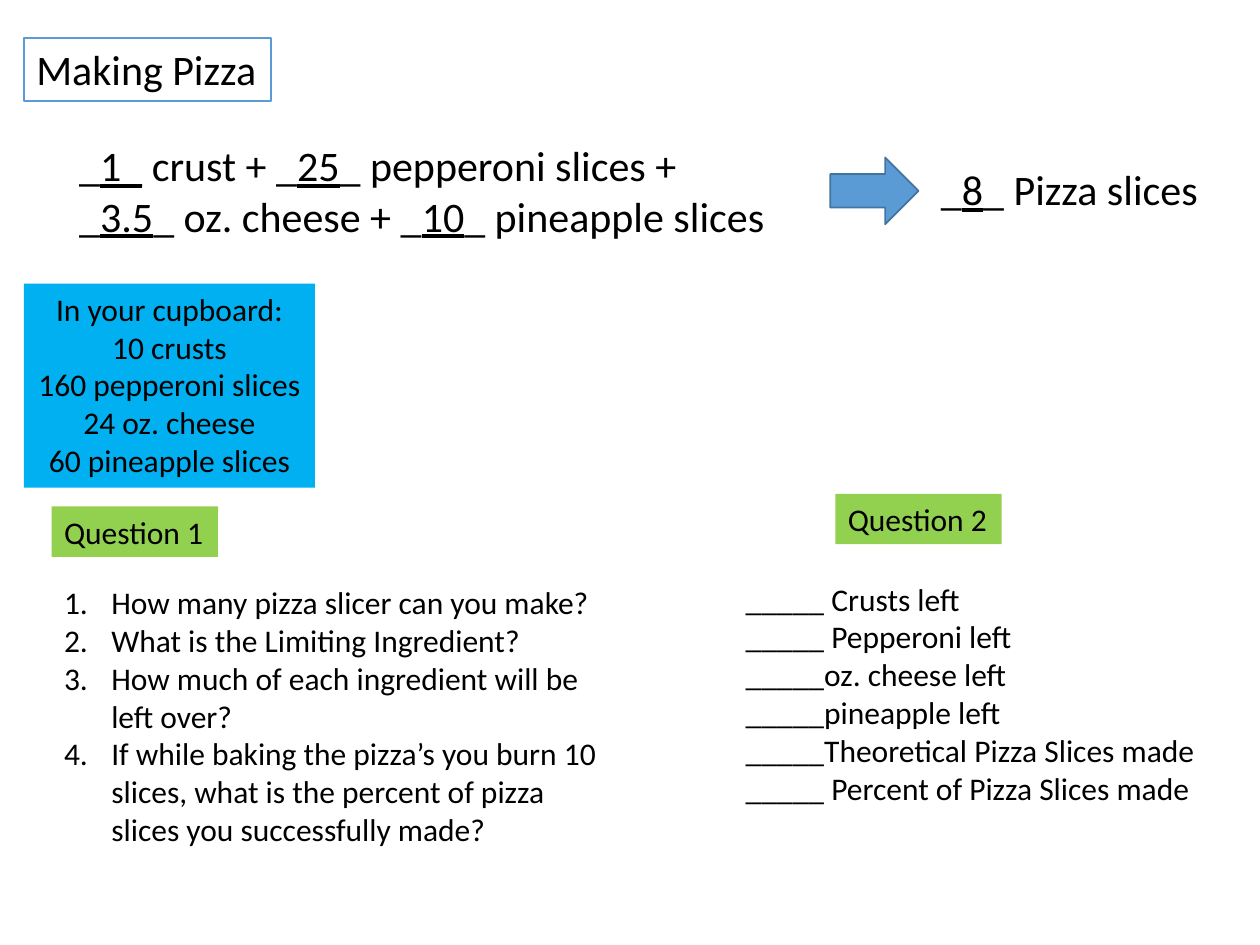
from pptx import Presentation
from pptx.dml.color import RGBColor
from pptx.enum.shapes import MSO_SHAPE
from pptx.enum.text import MSO_AUTO_SIZE, PP_ALIGN
from pptx.oxml.xmlchemy import OxmlElement
from pptx.util import Inches, Pt

COLORS = {
    "text": "000000",
    "paper": "FFFFFF",
    "blue": "5B9BD5",
    "arrow_edge": "43739E",
    "cupboard": "00B0F0",
    "question": "92D050",
}


def color(name):
    return RGBColor.from_string(COLORS[name])


def add_text(place, lines, size=18, fill=None, align=PP_ALIGN.LEFT, wrap=False):
    """Add a text box; every second part of a line split at "|" is underlined."""
    box = page.shapes.add_textbox(*[Inches(value) for value in place])
    if fill:
        box.fill.solid()
        box.fill.fore_color.rgb = color(fill)
    frame = box.text_frame
    frame.word_wrap = wrap
    frame.auto_size = MSO_AUTO_SIZE.SHAPE_TO_FIT_TEXT
    for index, line in enumerate(lines):
        para = frame.add_paragraph() if index else frame.paragraphs[0]
        para.alignment = align
        for position, part in enumerate(line.split("|")):
            span = para.add_run()
            span.text = part
            span.font.name = "Calibri"
            span.font.size = Pt(size)
            span.font.color.rgb = color("text")
            if position % 2:
                span.font.underline = True
    return box


deck = Presentation()
deck.slide_width = Inches(10)
deck.slide_height = Inches(7.5)
page = deck.slides.add_slide(deck.slide_layouts[6])

# Title and recipe
title = add_text((0.19, 0.3, 1.96, 0.5), ["Making Pizza"], size=24, fill="paper")
title.line.color.rgb = color("blue")
title.line.width = Pt(1)

add_text((0.53, 1.06, 5.69, 0.91), [
    "_|1_| crust + _|25|_ pepperoni slices +",
    "_|3.5|_ oz. cheese + _|10|_ pineapple slices",
], size=24)

arrow = page.shapes.add_shape(
    MSO_SHAPE.RIGHT_ARROW, Inches(6.59), Inches(1.25), Inches(0.7), Inches(0.53))
arrow.shadow.inherit = False
arrow.fill.solid()
arrow.fill.fore_color.rgb = color("blue")
arrow.line.color.rgb = color("arrow_edge")
arrow.line.width = Pt(1)

add_text((7.37, 1.25, 2.26, 0.5), ["_|8|_ Pizza slices"], size=24)

# Ingredients at hand
add_text((0.19, 2.25, 2.31, 1.62), [
    "In your cupboard:",
    "10 crusts",
    "160 pepperoni slices",
    "24 oz. cheese",
    "60 pineapple slices",
], fill="cupboard", align=PP_ALIGN.CENTER)

# Questions
for number, left, top in ((1, 0.41, 4.02), (2, 6.63, 3.92)):
    add_text((left, top, 1.32, 0.4), [f"Question {number}"], fill="question")

questions = add_text((0.41, 4.58, 4.48, 2.22), [
    "How many pizza slicer can you make?",
    "What is the Limiting Ingredient?",
    "How much of each ingredient will be left over?",
    "If while baking the pizza’s you burn 10 slices, "
    "what is the percent of pizza slices you successfully made?",
], wrap=True)
for para in questions.text_frame.paragraphs:
    properties = para._p.get_or_add_pPr()
    properties.set("marL", str(Inches(0.375)))
    properties.set("indent", str(-Inches(0.375)))
    numbering = OxmlElement("a:buAutoNum")
    numbering.set("type", "arabicPeriod")
    properties.append(numbering)

add_text((5.82, 4.55, 3.81, 2.22), [
    "_____ Crusts left",
    "_____ Pepperoni left",
    "_____oz. cheese left",
    "_____pineapple left",
    "_____Theoretical Pizza Slices made",
    "_____ Percent of Pizza Slices made",
])

deck.save("out.pptx")
